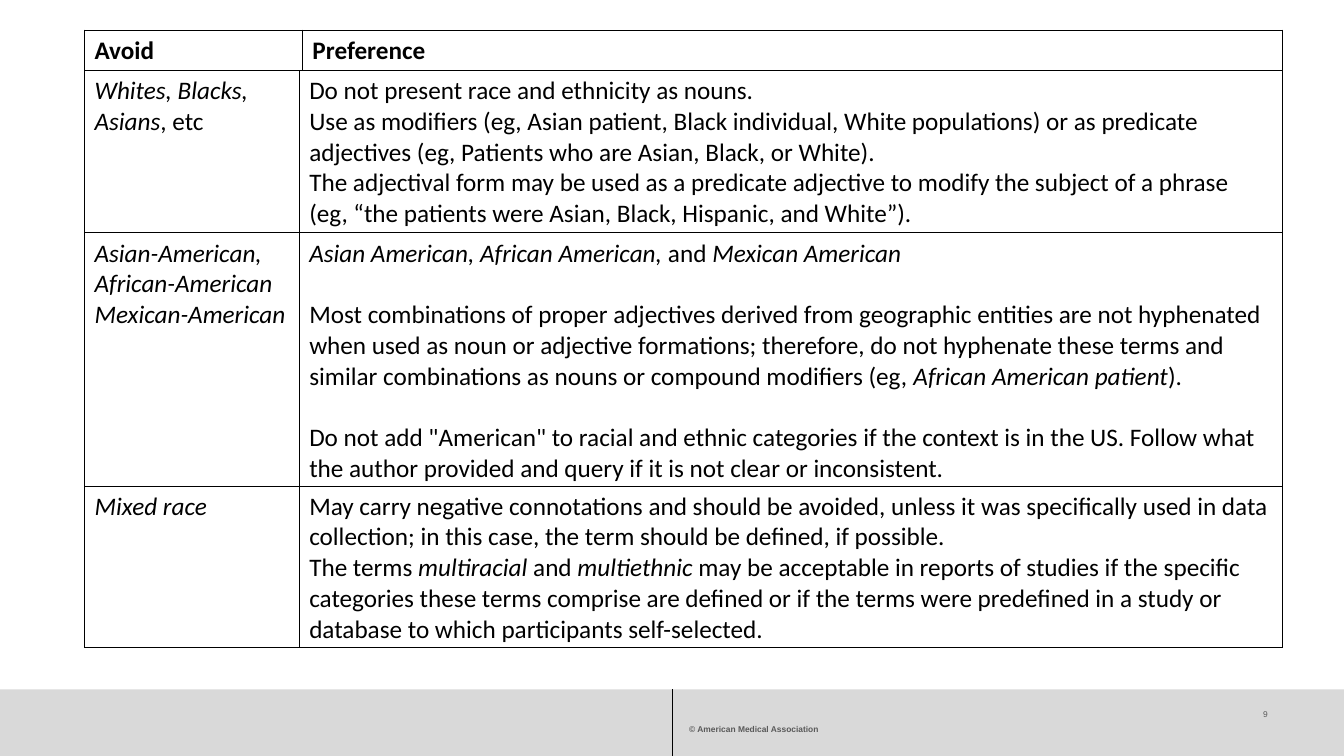
from dataclasses import dataclass

from lxml import etree
from pptx import Presentation
from pptx.dml.color import RGBColor
from pptx.enum.shapes import MSO_CONNECTOR, MSO_SHAPE
from pptx.enum.text import PP_ALIGN
from pptx.oxml.ns import qn
from pptx.slide import Slide
from pptx.table import _Cell
from pptx.text.text import TextFrame
from pptx.util import Cm, Pt

STRAIGHT = MSO_CONNECTOR.STRAIGHT
RECTANGLE = MSO_SHAPE.RECTANGLE
LEFT, RIGHT = PP_ALIGN.LEFT, PP_ALIGN.RIGHT

SLIDE_WIDTH, SLIDE_HEIGHT = 33.87, 19.05
FOOTER_TOP = 17.37
TABLE_LEFT, TABLE_WIDTH = 2.13, 30.18
BLACK, GREY, FOOTER_GREY = "000000", "595959", "D9D9D9"
LINE_GAP = 22


@dataclass
class Line:
    """One paragraph; asterisks enclose its italic parts."""
    text: str
    gap: float = 0
    bold: bool = False


@dataclass
class Row:
    height: float
    avoid: list[Line]
    preference: list[Line]


@dataclass
class Grid:
    top: float
    avoid_width: float
    rows: list[Row]


@dataclass
class FooterText:
    text: str
    left: float
    top: float
    width: float
    height: float
    align: PP_ALIGN
    bold: bool


GRIDS = [
    Grid(0.76, 5.49, [
        Row(1.02, [Line("Avoid", bold=True)], [Line("Preference", bold=True)]),
    ]),
    Grid(1.78, 5.41, [
        Row(4.09, [Line("*Whites, Blacks, Asians*, etc")], [
            Line("Do not present race and ethnicity as nouns."),
            Line("Use as modifiers (eg, Asian patient, Black individual, White populations) "
                 "or as predicate adjectives (eg, Patients who are Asian, Black, or White)."),
            Line("The adjectival form may be used as a predicate adjective to modify the subject "
                 "of a phrase (eg, “the patients were Asian, Black, Hispanic, and White”)."),
        ]),
        Row(6.35, [
            Line("*Asian-American,*"),
            Line("*African-American*"),
            Line("*Mexican-American  *"),
        ], [
            Line("*Asian American, African American,* and *Mexican American*"),
            Line("Most combinations of proper adjectives derived from geographic entities are not "
                 "hyphenated when used as noun or adjective formations; therefore, do not "
                 "hyphenate these terms and similar combinations as nouns or compound modifiers "
                 "(eg, *African American patient*).", gap=LINE_GAP),
            Line('Do not add "American" to racial and ethnic categories if the context is in the '
                 "US. Follow what the author provided and query if it is not clear or "
                 "inconsistent.", gap=LINE_GAP),
        ]),
        Row(4.05, [Line("*Mixed race*")], [
            Line("May carry negative connotations and should be avoided, unless it was "
                 "specifically used in data collection; in this case, the term should be "
                 "defined, if possible."),
            Line("The terms *multiracial* and *multiethnic* may be acceptable in reports of "
                 "studies if the specific categories these terms comprise are defined or if the "
                 "terms were predefined in a study or database to which participants "
                 "self-selected."),
        ]),
    ]),
]

FOOTER_TEXTS = [
    FooterText("© American Medical Association", 17.37, 18.24, 11.43, 0.25, LEFT, True),
    FooterText("9", 30.05, 17.86, 1.9, 1.02, RIGHT, False),
]


def color(value: str) -> RGBColor:
    return RGBColor.from_string(value)


def write_paragraph(frame: TextFrame, text: str, *, size: float = 18, font: str = "Calibri",
                    fill: str = BLACK, bold: bool = False, gap: float = 0,
                    align: PP_ALIGN = LEFT) -> None:
    """Fill the empty first paragraph, or append one; asterisks toggle italics."""
    first = frame.paragraphs[0]
    paragraph = frame.add_paragraph() if first.runs else first
    paragraph.alignment = align
    paragraph.space_before = Pt(gap)
    for index, part in enumerate(text.split("*")):
        if part:
            run = paragraph.add_run()
            run.text = part
            run.font.size, run.font.name = Pt(size), font
            run.font.bold, run.font.italic = bold, index % 2 == 1
            run.font.color.rgb = color(fill)


def add_borders(cell: _Cell) -> None:
    properties = cell._tc.get_or_add_tcPr()
    for position, side in enumerate(("lnL", "lnR", "lnT", "lnB")):
        border = etree.Element(qn(f"a:{side}"), w=str(Pt(0.75)))
        fill = etree.SubElement(border, qn("a:solidFill"))
        etree.SubElement(fill, qn("a:srgbClr"), val=BLACK)
        properties.insert(position, border)


def add_grid(slide: Slide, grid: Grid) -> None:
    height = sum(row.height for row in grid.rows)
    table = slide.shapes.add_table(len(grid.rows), 2, Cm(TABLE_LEFT), Cm(grid.top),
                                   Cm(TABLE_WIDTH), Cm(height)).table
    table.first_row = table.horz_banding = False
    table.columns[0].width = Cm(grid.avoid_width)
    table.columns[1].width = Cm(TABLE_WIDTH - grid.avoid_width)
    for row_index, row in enumerate(grid.rows):
        table.rows[row_index].height = Cm(row.height)
        for column_index, lines in enumerate((row.avoid, row.preference)):
            cell = table.cell(row_index, column_index)
            cell.fill.background()
            add_borders(cell)
            for line in lines:
                write_paragraph(cell.text_frame, line.text, bold=line.bold, gap=line.gap)


def add_footer_text(slide: Slide, item: FooterText) -> None:
    box = slide.shapes.add_textbox(Cm(item.left), Cm(item.top), Cm(item.width), Cm(item.height))
    frame = box.text_frame
    frame.word_wrap = True
    frame.margin_left = frame.margin_right = frame.margin_top = frame.margin_bottom = 0
    write_paragraph(frame, item.text, size=6, font="Arial", fill=GREY, bold=item.bold,
                    align=item.align)


def add_footer(slide: Slide) -> None:
    bar = slide.shapes.add_shape(RECTANGLE, 0, Cm(FOOTER_TOP), Cm(SLIDE_WIDTH),
                                 Cm(SLIDE_HEIGHT - FOOTER_TOP))
    bar.shadow.inherit = False
    bar.fill.solid()
    bar.fill.fore_color.rgb = color(FOOTER_GREY)
    bar.line.fill.background()
    middle = Cm(SLIDE_WIDTH / 2)
    divider = slide.shapes.add_connector(STRAIGHT, middle, Cm(FOOTER_TOP), middle,
                                         Cm(SLIDE_HEIGHT))
    divider.line.color.rgb = color(BLACK)
    divider.line.width = Pt(0.25)
    etree.SubElement(divider._element.spPr, qn("a:effectLst"))
    for item in FOOTER_TEXTS:
        add_footer_text(slide, item)


def main() -> None:
    presentation = Presentation()
    presentation.slide_width, presentation.slide_height = Cm(SLIDE_WIDTH), Cm(SLIDE_HEIGHT)
    slide = presentation.slides.add_slide(presentation.slide_layouts[6])
    add_footer(slide)
    for grid in GRIDS:
        add_grid(slide, grid)
    presentation.save("out.pptx")


if __name__ == "__main__":
    main()
